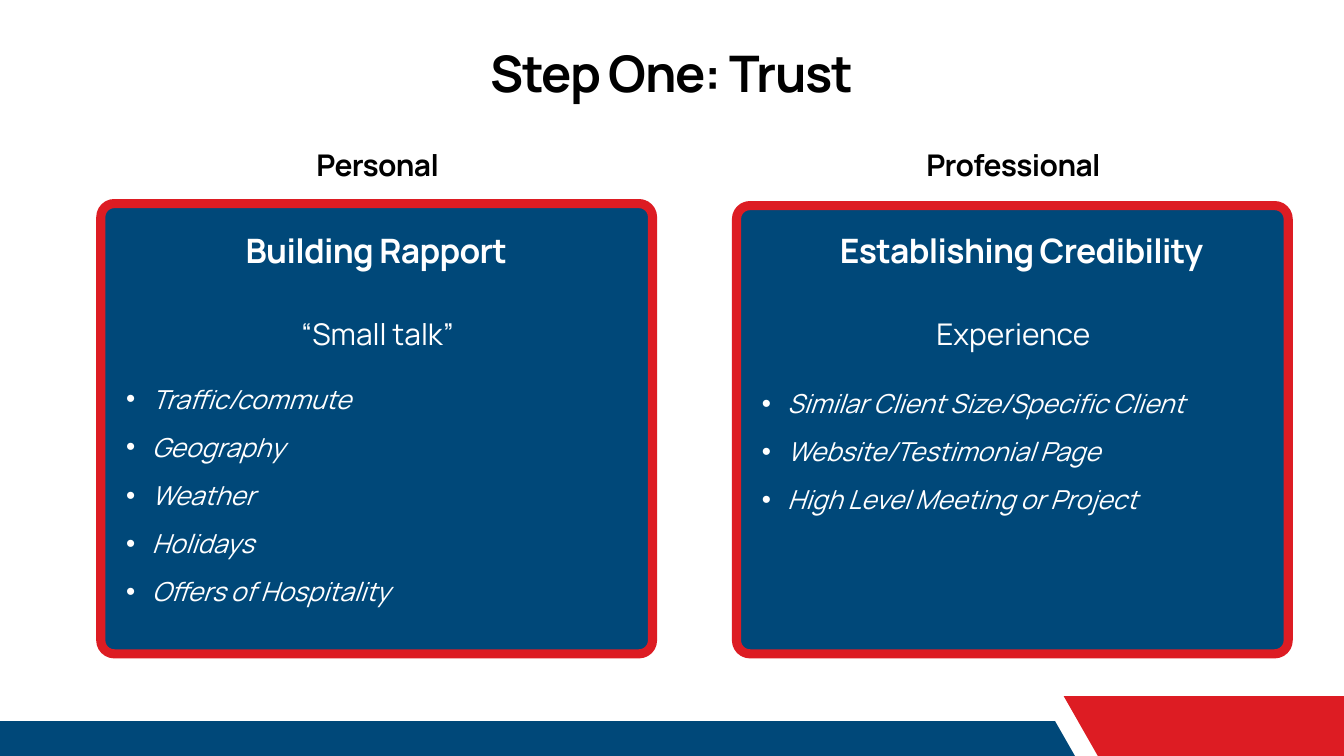
from lxml import etree
from pptx import Presentation
from pptx.dml.color import RGBColor
from pptx.enum.shapes import MSO_SHAPE
from pptx.enum.text import MSO_ANCHOR, MSO_AUTO_SIZE, PP_ALIGN
from pptx.oxml.ns import qn
from pptx.util import Inches, Pt

CENTER, LEFT = PP_ALIGN.CENTER, PP_ALIGN.LEFT
TOP = MSO_ANCHOR.TOP
FIT_SHAPE = MSO_AUTO_SIZE.SHAPE_TO_FIT_TEXT
ROUNDED = MSO_SHAPE.ROUNDED_RECTANGLE

FONT = "Manrope"
NAVY = RGBColor(0x00, 0x48, 0x79)
RED = RGBColor(0xDD, 0x1C, 0x23)
WHITE = RGBColor(0xFF, 0xFF, 0xFF)
BLACK = RGBColor(0x00, 0x00, 0x00)

CARD_WIDTH, CARD_BOTTOM, CORNER = 8.21, 9.73, 0.2
LABEL_WIDTH = 5.78
BODY_INSET, BODY_WIDTH = 0.28, 7.68
LEFT_CARD = dict(
    left=1.5, top=3.03, label="Personal", label_left=2.73,
    heading="Building Rapport", heading_left=2.71,
    topic="“Small talk”", topic_gap=33.6, body_height=4.48,
    items=["Traffic/commute", "Geography", "Weather", "Holidays",
           "Offers of Hospitality"])
RIGHT_CARD = dict(
    left=10.96, top=3.06, label="Professional", label_left=12.19,
    heading="Establishing Credibility", heading_left=12.31,
    topic="Experience", topic_gap=38.4, body_height=3.82,
    items=["Similar Client Size/Specific Client", "Website/Testimonial Page",
           "High Level Meeting or Project"])


def place(shape, left, top, width, height):
    shape.left, shape.top = Inches(left), Inches(top)
    shape.width, shape.height = Inches(width), Inches(height)


def format_paragraph(paragraph, size, color, alignment, bold=False, italic=False):
    paragraph.alignment = alignment
    for run in paragraph.runs:
        font = run.font
        font.name, font.size = FONT, Pt(size)
        font.bold, font.italic = bold, italic
        font.color.rgb = color


def prepare_frame(text_frame):
    text_frame.word_wrap = True
    text_frame.auto_size = FIT_SHAPE
    text_frame.vertical_anchor = TOP


def write_heading(shape, text, size, color, line_spacing, tracking):
    """Fill a shape with one bold centred line; tracking is in points."""
    frame = shape.text_frame
    frame.text = text
    prepare_frame(frame)
    frame.margin_left = frame.margin_right = 0
    frame.margin_top = frame.margin_bottom = 0
    paragraph = frame.paragraphs[0]
    format_paragraph(paragraph, size, color, CENTER, bold=True)
    paragraph.line_spacing = Pt(line_spacing)
    run_properties = paragraph.runs[0].font._element
    run_properties.set("spc", str(round(tracking * 100)))


def add_heading(slide, text, left, top, height, size, color):
    box = slide.shapes.add_textbox(0, 0, 0, 0)
    write_heading(box, text, size, color, 25.3, -0.7)
    place(box, left, top, LABEL_WIDTH, height)


def add_bullet(paragraph):
    properties = paragraph._p.get_or_add_pPr()
    properties.set("marL", str(Inches(0.38)))
    properties.set("indent", str(-Inches(0.38)))
    etree.SubElement(properties, qn("a:buFont")).set("typeface", "Arial")
    etree.SubElement(properties, qn("a:buChar")).set("char", "•")


def add_body(slide, card):
    box = slide.shapes.add_textbox(0, 0, 0, 0)
    frame = box.text_frame
    prepare_frame(frame)
    topic = frame.paragraphs[0]
    topic.text = card["topic"]
    topic.space_after = Pt(card["topic_gap"])
    format_paragraph(topic, 32, WHITE, CENTER)
    for item in card["items"]:
        paragraph = frame.add_paragraph()
        paragraph.text = item
        paragraph.space_after = Pt(18)
        format_paragraph(paragraph, 28, WHITE, LEFT, italic=True)
        add_bullet(paragraph)
    place(box, card["left"] + BODY_INSET, 4.65, BODY_WIDTH, card["body_height"])


def add_card(slide, card):
    height = CARD_BOTTOM - card["top"]
    panel = slide.shapes.add_shape(
        ROUNDED, Inches(card["left"]), Inches(card["top"]),
        Inches(CARD_WIDTH), Inches(height))
    panel.adjustments[0] = CORNER / height
    panel.shadow.inherit = False
    panel.fill.solid()
    panel.fill.fore_color.rgb = NAVY
    panel.line.color.rgb = RED
    panel.line.width = Pt(9.75)
    add_heading(slide, card["heading"], card["heading_left"], 3.67, 0.4, 36, WHITE)
    add_body(slide, card)
    add_heading(slide, card["label"], card["label_left"], 2.37, 0.39, 32, BLACK)


def add_slanted_band(slide, left, right, top, slant, color):
    """Draw a footer parallelogram whose lower edge is shifted right by slant."""
    bottom = 11.57
    builder = slide.shapes.build_freeform(
        Inches(left), Inches(top), scale=1.0)
    builder.add_line_segments(
        [(Inches(x), Inches(y)) for x, y in (
            (right, top), (right + slant, bottom), (left + slant, bottom))],
        close=True)
    band = builder.convert_to_shape()
    band.shadow.inherit = False
    band.fill.solid()
    band.fill.fore_color.rgb = color
    band.line.fill.background()


def main():
    presentation = Presentation()
    presentation.slide_width = Inches(20)
    presentation.slide_height = Inches(11.25)
    slide = presentation.slides.add_slide(presentation.slide_layouts[5])

    title = slide.shapes.title
    write_heading(title, "Step One: Trust", 54, BLACK, 51.7, -1.3)
    place(title, 3.88, 0.81, 12.24, 0.76)

    add_slanted_band(slide, -1.25, 15.7, 10.73, 0.48, NAVY)
    add_slanted_band(slide, 15.83, 24.18, 10.36, 0.69, RED)
    for card in (LEFT_CARD, RIGHT_CARD):
        add_card(slide, card)

    presentation.save("out.pptx")


if __name__ == "__main__":
    main()
